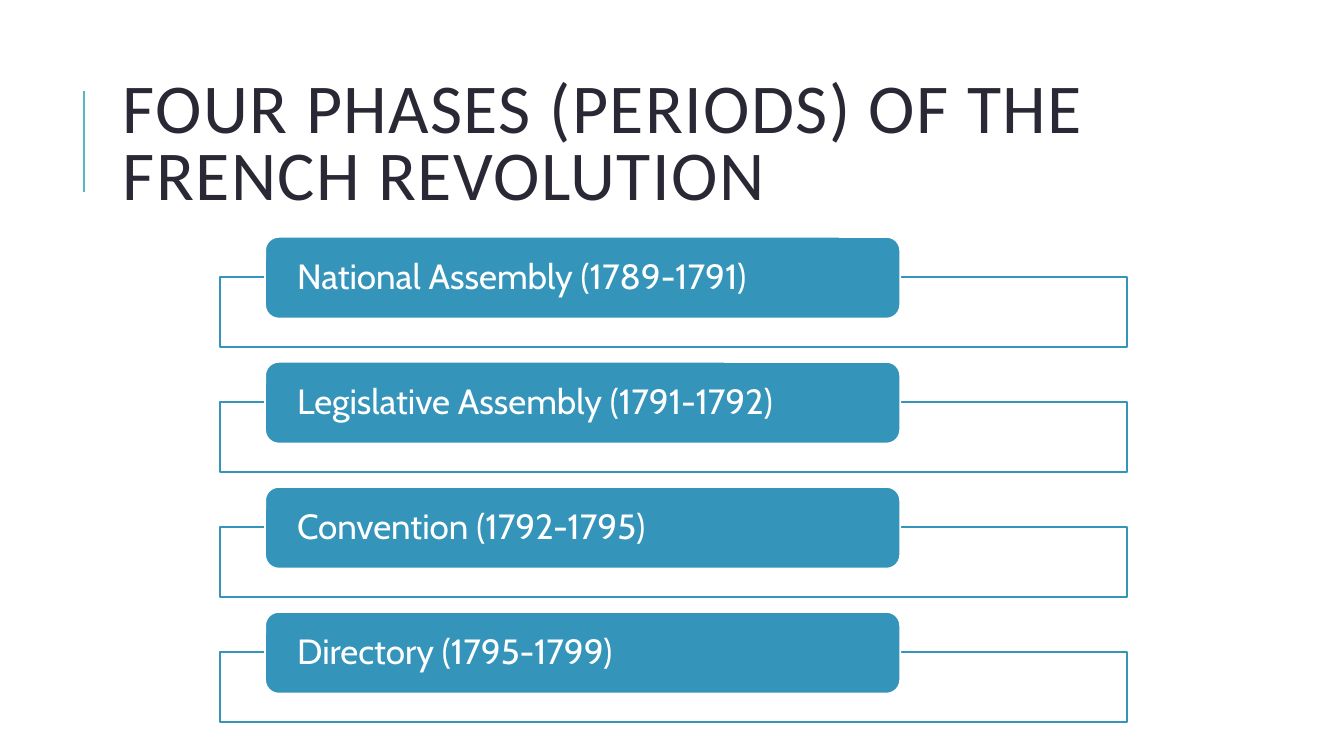
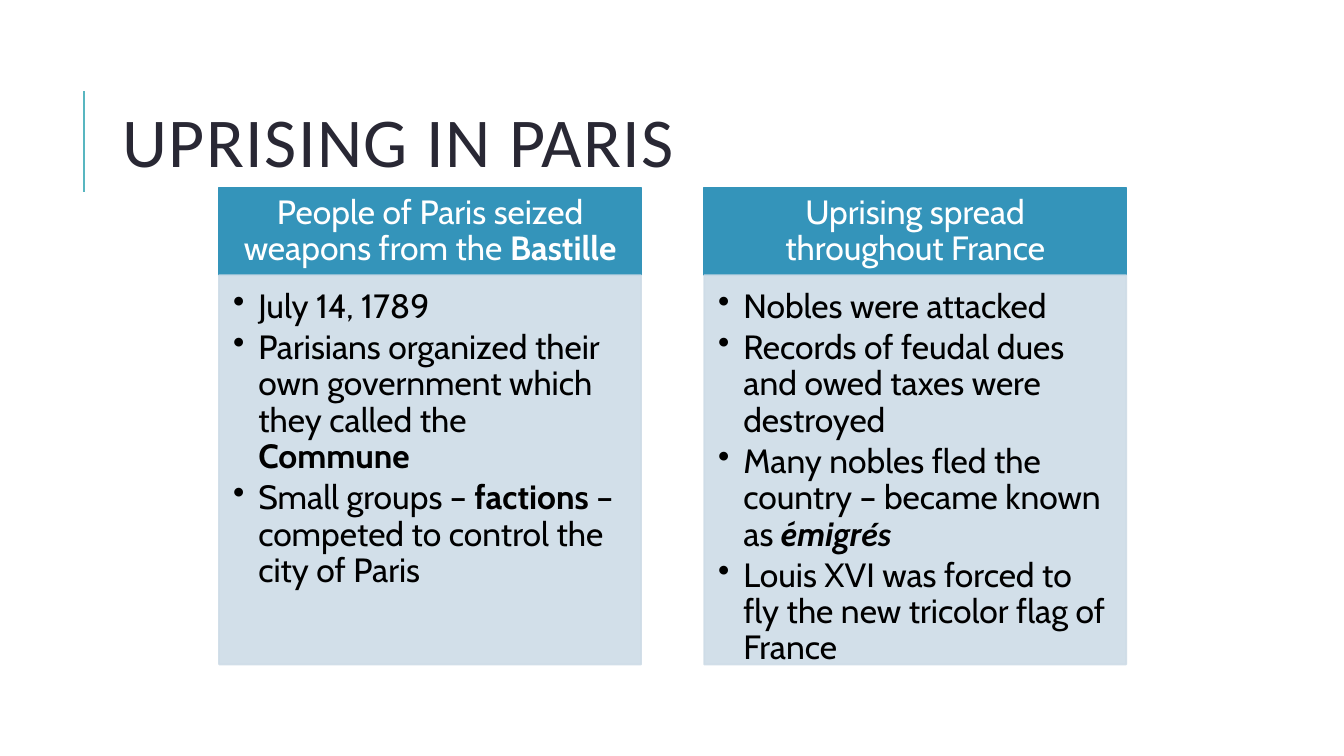
from pptx import Presentation
from pptx.dml.color import RGBColor
from pptx.enum import shapes, text
from pptx.oxml import parse_xml
from pptx.oxml import ns
from pptx.util import Pt
from lxml import etree

INK, BLUE, TEAL, PALE = "292834", "3494BA", "58B6C0", "CEDCE7"
WHITE, BLACK = "FFFFFF", "000000"
HEAD_FONT, BODY_FONT = "Calibri", "Cabin"
BOLD = {"bold": True}
MIDDLE, TOP = text.MSO_ANCHOR.MIDDLE, text.MSO_ANCHOR.TOP
LEFT, CENTER = text.PP_ALIGN.LEFT, text.PP_ALIGN.CENTER

PHASES = [
    "National Assembly (1789-1791)",
    "Legislative Assembly (1791-1792)",
    "Convention (1792-1795)",
    "Directory (1795-1799)",
]

# Each column: header runs, then one list of runs per bullet
EVENTS = [
    ([("People of Paris seized weapons from the ", {}), ("Bastille", BOLD)], [
        [("July 14, 1789", {})],
        [("Parisians organized their own government which they called the ", {}),
         ("Commune", BOLD)],
        [("Small groups – ", {}), ("factions", BOLD),
         (" – competed to control the city of Paris", {})],
    ]),
    ([("Uprising spread throughout France", {})], [
        [("Nobles were attacked", {})],
        [("Records of feudal dues and owed taxes were destroyed", {})],
        [("Many nobles fled the country – became known as ", {}),
         ("émigr", {"bold": True, "italic": True}),
         ("és", {"bold": True, "italic": True, "name": HEAD_FONT})],
        [("Louis XVI was forced to fly the new tricolor flag of France", {})],
    ]),
]


def set_color(color_format, hex_color, opacity=100):
    color_format.rgb = RGBColor.from_string(hex_color)


def paint(target, hex_color, opacity=100):
    """Give a fill a solid colour, with opacity in percent."""
    target.solid()
    set_color(target.fore_color, hex_color)
    if opacity < 100:
        for color in target._xPr.iter(ns.qn("a:srgbClr")):
            if color.getparent().getparent() is target._xPr:
                alpha = etree.SubElement(color, ns.qn("a:alpha"))
                alpha.set("val", str(opacity * 1000))


def add_box(slide, kind, box, fill, line, opacity=100):
    shape = slide.shapes.add_shape(kind, *map(Pt, box))
    shape.shadow.inherit = False
    paint(shape.fill, fill, opacity)
    paint(shape.line.fill, line, opacity)
    shape.line.width = Pt(1.25)
    return shape


def set_frame(shape, anchor, insets):
    frame = shape.text_frame
    sides = ("margin_left", "margin_top", "margin_right", "margin_bottom")
    settings = dict(zip(sides, map(Pt, insets)), word_wrap=True,
                    vertical_anchor=anchor)
    for key, value in settings.items():
        setattr(frame, key, value)
    return frame


def write(frame, paragraphs, size, color, font=BODY_FONT, align=LEFT,
          spacing=0.9, after=0, bullet=False, tracking=0):
    for index, runs in enumerate(paragraphs):
        para = frame.add_paragraph() if index else frame.paragraphs[0]
        settings = {"alignment": align, "line_spacing": spacing,
                    "space_after": Pt(after)}
        for key, value in settings.items():
            setattr(para, key, value)
        if bullet:
            props = para._p.get_or_add_pPr()
            props.set("marL", str(Pt(18)))
            props.set("indent", str(-Pt(18)))
            etree.SubElement(props, ns.qn("a:buChar")).set("char", "•")
        for words, style in runs:
            run = para.add_run()
            run.text = words
            base = {"size": Pt(size), "name": font}
            for key, value in {**base, **style}.items():
                setattr(run.font, key, value)
            set_color(run.font.color, color)
            if tracking:
                run._r.get_or_add_rPr().set("spc", str(tracking * 100))


def add_titled_slide(deck, title):
    slide = deck.slides.add_slide(deck.slide_layouts[6])
    # Accent rule beside the title
    rule = slide.shapes.add_connector(
        shapes.MSO_CONNECTOR.STRAIGHT, Pt(60), Pt(137), Pt(60), Pt(65))
    paint(rule.line.fill, TEAL)
    rule.line.width = Pt(1.5)
    etree.SubElement(rule._element.spPr, ns.qn("a:effectLst"))
    # Title
    heading = slide.shapes.add_textbox(Pt(80.6), Pt(46), Pt(765.4), Pt(118))
    frame = set_frame(heading, MIDDLE, (7.2, 3.6, 7.2, 3.6))
    write(frame, [[(title, {})]], 50, INK, HEAD_FONT, spacing=0.8, tracking=1)
    return slide


def add_phase_list(slide, box, phases):
    left, top, width, height = box
    gap, pill_height, frame_drop = 10.8, 58.3, 28.8
    pitch = (height + gap) / len(phases)
    for index, phase in enumerate(phases):
        y = top + index * pitch
        # Outlined frame behind the label
        add_box(slide, shapes.MSO_SHAPE.RECTANGLE,
                (left, y + frame_drop, width, pitch - gap - frame_drop),
                WHITE, BLUE)
        # Rounded label
        label = add_box(slide, shapes.MSO_SHAPE.ROUNDED_RECTANGLE,
                        (left + width * 0.05, y, width * 0.7, pill_height),
                        BLUE, WHITE)
        frame = set_frame(label, MIDDLE, (20, 0, 20, 0))
        write(frame, [[(phase, {})]], 25, WHITE)


def add_event_columns(slide, box, columns):
    left, top, width, height = box
    gap, header_height = 45, 62.6
    column_width = (width - gap * (len(columns) - 1)) / len(columns)
    for index, (header_runs, bullets) in enumerate(columns):
        x = left + index * (column_width + gap)
        # Column header
        header = add_box(slide, shapes.MSO_SHAPE.RECTANGLE,
                         (x, top, column_width, header_height), BLUE, BLUE)
        frame = set_frame(header, MIDDLE, (13.5, 7.8, 13.5, 7.8))
        write(frame, [header_runs], 24, WHITE, align=CENTER)
        # Bulleted body
        body = add_box(slide, shapes.MSO_SHAPE.RECTANGLE,
                       (x, top + header_height, column_width,
                        height - header_height), PALE, PALE, 90)
        frame = set_frame(body, TOP, (10, 10, 13.5, 15))
        write(frame, bullets, 24, BLACK, after=3.6, bullet=True)


def main():
    deck = Presentation()
    deck.slide_width, deck.slide_height = Pt(960), Pt(540)
    phases_slide = add_titled_slide(
        deck, "FOUR PHASES (PERIODS) OF THE FRENCH REVOLUTION")
    add_phase_list(phases_slide, (157, 169.2, 648, 346.4), PHASES)
    uprising_slide = add_titled_slide(deck, "UPRISING IN PARIS")
    add_event_columns(uprising_slide, (156.5, 134, 648, 340.6), EVENTS)
    deck.save("out.pptx")


if __name__ == "__main__":
    main()
